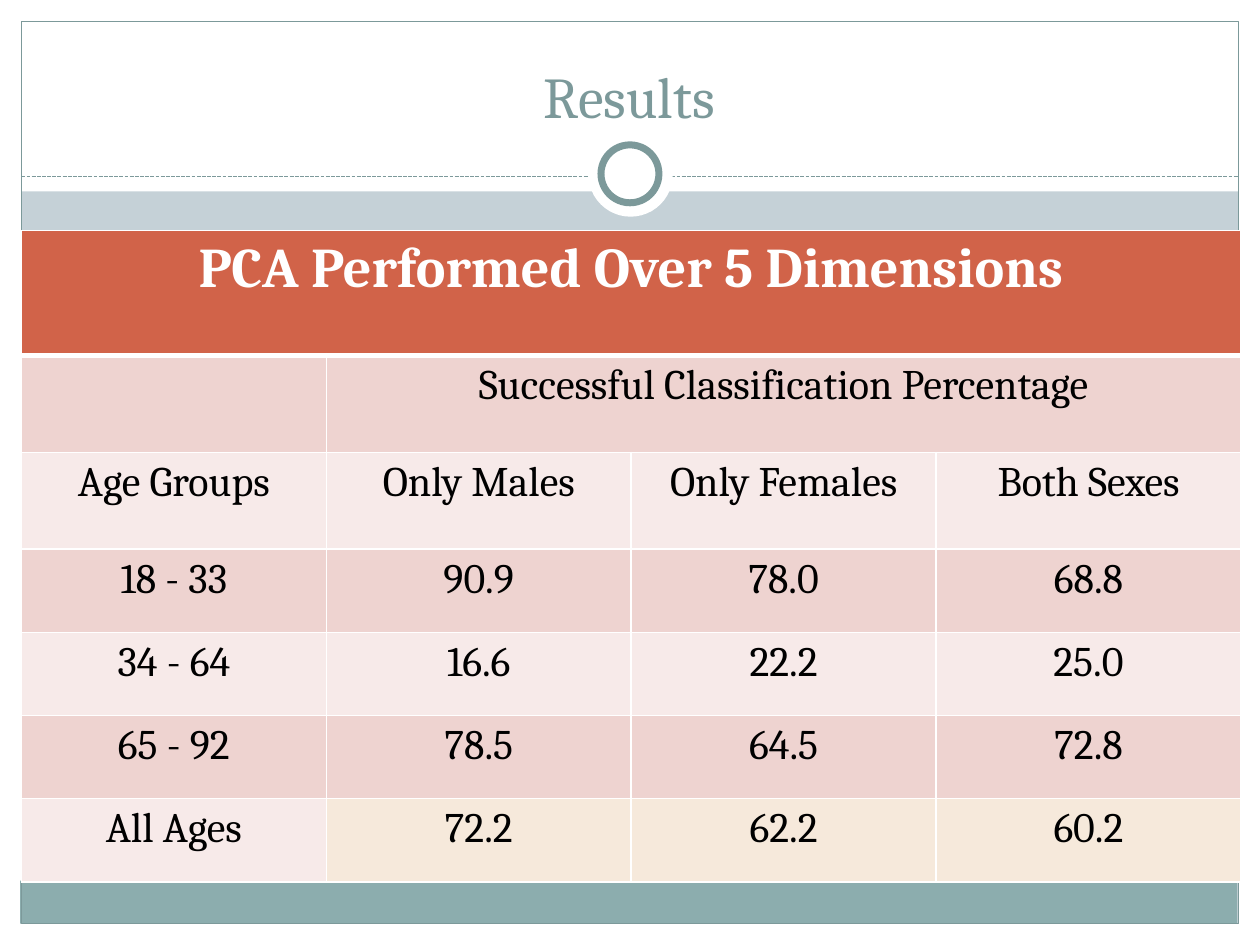
from dataclasses import dataclass
from typing import Optional

from lxml import etree
from pptx import Presentation
from pptx.dml.color import RGBColor
from pptx.enum import dml, shapes, text
from pptx.oxml import ns
from pptx.util import Inches, Pt

FONT = "Cambria"
WHITE, TEAL, BLACK = "FFFFFF", "7C999A", "000000"
BACKGROUND, FOOTER = "C5D1D7", "8CADAE"
HEADING, DARK_BAND, LIGHT_BAND, TOTALS = "D16349", "EED3D0", "F7EAE9", "F6E9DB"

COLUMN_WIDTH = 2.42
ROW_HEIGHTS = [0.99, 0.77, 0.77] + [0.66] * 4
RESULTS = [
    ["PCA Performed Over 5 Dimensions", "", "", ""],
    ["", "Successful Classification Percentage", "", ""],
    ["Age Groups", "Only Males", "Only Females", "Both Sexes"],
    ["18 - 33", "90.9", "78.0", "68.8"],
    ["34 - 64", "16.6", "22.2", "25.0"],
    ["65 - 92", "78.5", "64.5", "72.8"],
    ["All Ages", "72.2", "62.2", "60.2"],
]


@dataclass
class Panel:
    left: float
    top: float
    width: float
    height: float
    fill: Optional[str] = WHITE
    line_width: float = 0
    kind: shapes.MSO_SHAPE = shapes.MSO_SHAPE.RECTANGLE


FRAME = [
    Panel(0, 7.33, 10, 0.17),
    Panel(0, 0, 10, 1.52),
    Panel(0, 0, 0.17, 7.5),
    Panel(9.83, 0, 0.17, 7.5),
    Panel(0.16, 6.99, 9.66, 0.34, FOOTER),
    Panel(0.17, 0.17, 9.66, 7.16, None, 0.75),
]
RING = [
    Panel(4.67, 1.05, 0.67, 0.67, kind=shapes.MSO_SHAPE.OVAL),
    Panel(4.77, 1.15, 0.46, 0.46, line_width=4, kind=shapes.MSO_SHAPE.OVAL),
]


def rgb(value: str) -> RGBColor:
    return RGBColor.from_string(value)


def paint(fill, colour: str) -> None:
    fill.solid()
    fill.fore_color.rgb = rgb(colour)


def write(frame, words: str, *, size: float, colour: str, bold: bool = False) -> None:
    """Put one centred line of words into a text frame."""
    paragraph = frame.paragraphs[0]
    paragraph.alignment = text.PP_ALIGN.CENTER
    run = paragraph.add_run()
    run.text = words
    run.font.name, run.font.size, run.font.bold = FONT, Pt(size), bold
    run.font.color.rgb = rgb(colour)


def draw_panel(slide, panel: Panel) -> None:
    shape = slide.shapes.add_shape(
        panel.kind, Inches(panel.left), Inches(panel.top),
        Inches(panel.width), Inches(panel.height))
    shape.shadow.inherit = False
    if panel.fill:
        paint(shape.fill, panel.fill)
    else:
        shape.fill.background()
    if panel.line_width:
        shape.line.color.rgb = rgb(TEAL)
        shape.line.width = Pt(panel.line_width)
    else:
        shape.line.fill.background()


def draw_divider(slide) -> None:
    divider = slide.shapes.add_connector(
        shapes.MSO_CONNECTOR.STRAIGHT,
        Inches(0.17), Inches(1.4), Inches(9.83), Inches(1.4))
    divider.line.color.rgb = rgb(TEAL)
    divider.line.width = Pt(0.75)
    divider.line.dash_style = dml.MSO_LINE.SQUARE_DOT
    etree.SubElement(divider._element.spPr, ns.qn("a:effectLst"))


def draw_title(slide) -> None:
    title = slide.shapes.add_textbox(
        Inches(0.33), Inches(0.25), Inches(9.33), Inches(0.83))
    title.text_frame.word_wrap = True
    title.text_frame.vertical_anchor = text.MSO_ANCHOR.BOTTOM
    write(title.text_frame, "Results", size=33, colour=TEAL)


def add_borders(cell, **widths: float) -> None:
    """Add white borders; must run before the cell is filled."""
    properties = cell._tc.get_or_add_tcPr()
    for side in "LRTB":
        line = etree.SubElement(properties, ns.qn(f"a:ln{side}"),
                                w=str(Pt(widths.get(side, 1))))
        solid = etree.SubElement(line, ns.qn("a:solidFill"))
        etree.SubElement(solid, ns.qn("a:srgbClr"), val=WHITE)


def cell_fill(row: int, column: int) -> str:
    if row == 0:
        return HEADING
    if row == len(RESULTS) - 1 and column > 0:
        return TOTALS
    return DARK_BAND if row % 2 else LIGHT_BAND


def draw_results(slide) -> None:
    columns = len(RESULTS[0])
    table = slide.shapes.add_table(
        len(RESULTS), columns, Inches(0.17), Inches(1.83),
        Inches(COLUMN_WIDTH * columns), Inches(sum(ROW_HEIGHTS))).table
    for column in table.columns:
        column.width = Inches(COLUMN_WIDTH)
    for row, height in zip(table.rows, ROW_HEIGHTS):
        row.height = Inches(height)
    table.cell(0, 0).merge(table.cell(0, columns - 1))
    table.cell(1, 1).merge(table.cell(1, columns - 1))

    for r, row_words in enumerate(RESULTS):
        for c, words in enumerate(row_words):
            cell = table.cell(r, c)
            add_borders(cell, T=3 if r == 1 else 1, B=3 if r == 0 else 1)
            paint(cell.fill, cell_fill(r, c))
            if words and r == 0:
                write(cell.text_frame, words, size=32, colour=WHITE, bold=True)
            elif words:
                write(cell.text_frame, words, size=24, colour=BLACK)


def main() -> None:
    deck = Presentation()
    deck.slide_width, deck.slide_height = Inches(10), Inches(7.5)
    slide = deck.slides.add_slide(deck.slide_layouts[6])
    paint(slide.background.fill, BACKGROUND)
    for panel in FRAME:
        draw_panel(slide, panel)
    draw_divider(slide)
    for panel in RING:
        draw_panel(slide, panel)
    draw_title(slide)
    draw_results(slide)
    deck.save("out.pptx")


if __name__ == "__main__":
    main()
